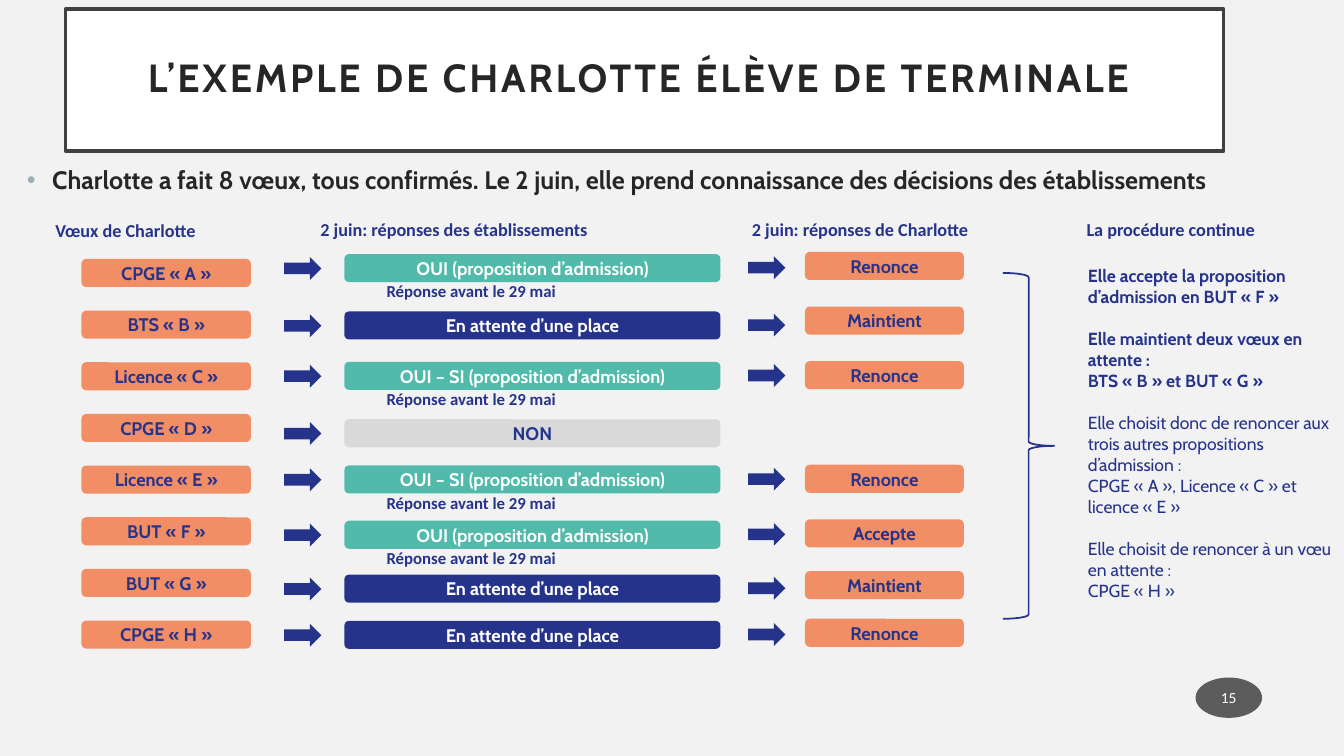
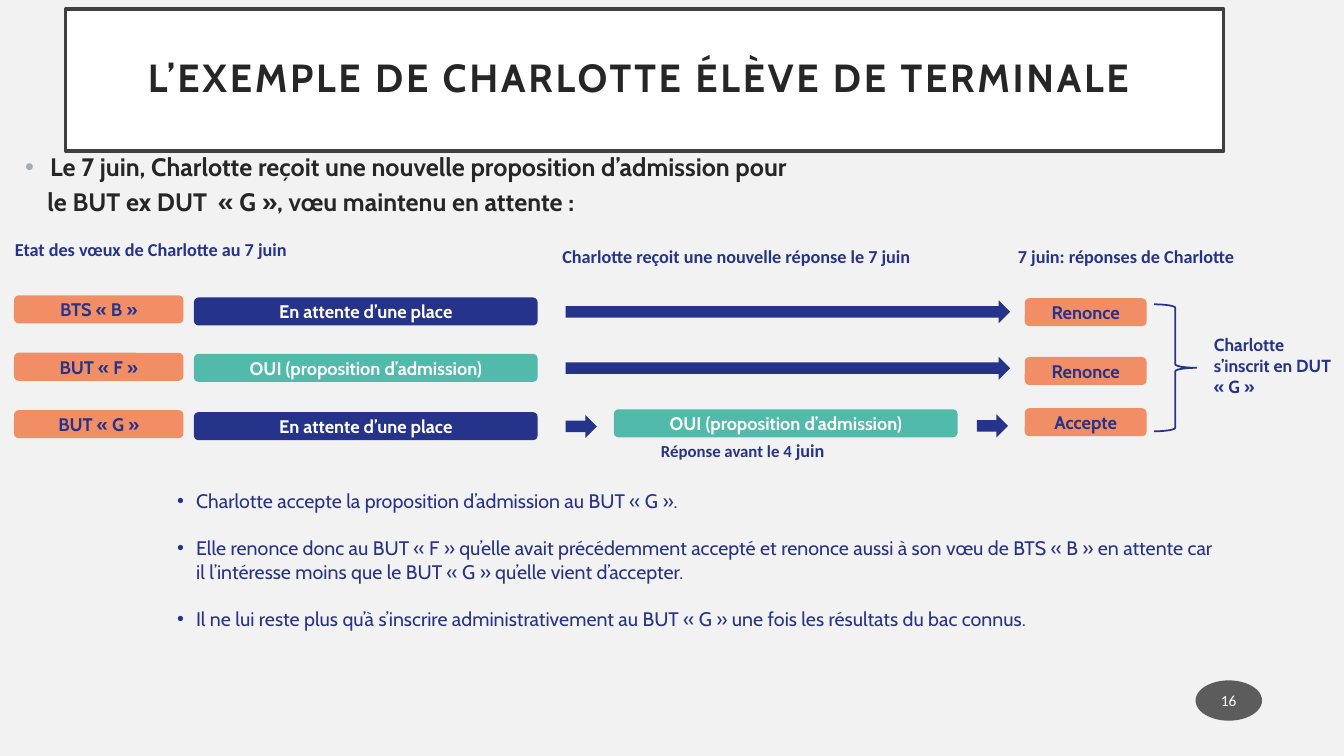
from dataclasses import dataclass

from lxml import etree
from pptx import Presentation
from pptx.dml import color as col
from pptx.enum import shapes as shp, text as txt
from pptx.oxml import ns
from pptx.util import Pt

HUES = {
    "page": "F2F2F2", "white": "FFFFFF", "frame": "404040", "ink": "262626",
    "navy": "26338B", "teal": "51BAAA", "coral": "F28E65", "gray": "D9D9D9",
    "badge": "1D1D1D", "dot": "9CB0B5",
}
STYLES = {
    "title": ("Cabin", 28, "ink", True),
    "lead": ("Cabin", 18, "ink", True),
    "pill": ("Cabin", 13, "navy", True),
    "light": ("Cabin", 13, "white", True),
    "head": ("Calibri", 13, "navy", True),
    "date": ("Calibri", 12, "navy", True),
    "strong": ("Cabin", 12.5, "navy", True),
    "plain": ("Cabin", 12.5, "navy", False),
    "point": ("Cabin", 14, "navy", False),
    "page": ("Calibri", 11, "white", False),
}
REPLIES = {
    "oui": ("OUI (proposition d’admission)", "teal", "light"),
    "si": ("OUI – SI (proposition d’admission)", "teal", "light"),
    "wait": ("En attente d’une place", "navy", "light"),
    "non": ("NON", "gray", "pill"),
}
TITLE = "L’EXEMPLE DE CHARLOTTE ÉLÈVE DE TERMINALE "
PILL = 20


@dataclass
class Para:
    runs: list
    gap: float = 0
    left: float = 0
    dot: str = ""


class Deck:
    """Hold the shared style and draw elements on the current slide."""

    def __init__(self):
        self.prs = Presentation()
        self.prs.slide_width, self.prs.slide_height = Pt(960), Pt(540)

    def hue(self, name):
        return col.RGBColor.from_string(HUES[name])

    def words(self, shape, paras, align=txt.PP_ALIGN.LEFT,
              anchor=txt.MSO_ANCHOR.TOP, pad=(7.2, 3.6)):
        frame = shape.text_frame
        frame.word_wrap = True
        frame.vertical_anchor = anchor
        frame.margin_left = frame.margin_right = Pt(pad[0])
        frame.margin_top = frame.margin_bottom = Pt(pad[1])
        for num, item in enumerate(paras):
            para = frame.add_paragraph() if num else frame.paragraphs[0]
            para.alignment = align
            para.space_before = Pt(item.gap)
            props = para._p.get_or_add_pPr()
            props.set("marL", str(Pt(item.left)))
            if item.dot:
                props.set("indent", str(-Pt(item.left)))
                tint = etree.SubElement(props, ns.qn("a:buClr"))
                etree.SubElement(tint, ns.qn("a:srgbClr"), val=HUES[item.dot])
                etree.SubElement(props, ns.qn("a:buFont"), typeface="Arial")
                etree.SubElement(props, ns.qn("a:buChar"), char="•")
            for words, style in item.runs:
                run = para.add_run()
                run.text = words
                font = run.font
                font.name, size, tone, font.bold = STYLES[style]
                font.size = Pt(size)
                font.color.rgb = self.hue(tone)
        return frame

    def shape(self, kind, box, fill=None, line=None, width=1):
        item = self.slide.shapes.add_shape(kind, *map(Pt, box))
        item.shadow.inherit = False
        if fill:
            item.fill.solid()
            item.fill.fore_color.rgb = self.hue(fill)
        else:
            item.fill.background()
        if line:
            item.line.color.rgb = self.hue(line)
            item.line.width = Pt(width)
        else:
            item.line.fill.background()
        return item

    def label(self, item, words, style, pad=(7.2, 3.6)):
        return self.words(item, [Para([(words, style)])], txt.PP_ALIGN.CENTER,
                          txt.MSO_ANCHOR.MIDDLE, pad)

    def page(self, num, top):
        blank = self.prs.slide_layouts[6]
        self.slide = self.prs.slides.add_slide(blank)
        back = self.slide.background.fill
        back.solid()
        back.fore_color.rgb = self.hue("page")
        band = self.shape(shp.MSO_SHAPE.RECTANGLE, (46.8, 6.5, 827.3, 101.5),
                          "white", "frame", 2.5)
        para = self.label(band, TITLE, "title", (14.4, 14.4)).paragraphs[0]
        para.line_spacing = 0.9
        para.runs[0].font._element.set("spc", "200")
        badge = self.shape(shp.MSO_SHAPE.OVAL, (854, top, 47.5, 28.8), "badge")
        tint = badge.fill._xPr.find(".//" + ns.qn("a:srgbClr"))
        etree.SubElement(tint, ns.qn("a:alpha"), val="70000")
        self.label(badge, str(num), "page", (1.4, 3.6))

    def text(self, box, paras):
        item = self.slide.shapes.add_textbox(*map(Pt, box))
        self.words(item, paras)

    def head(self, left, top, wide, words):
        self.text((left, top, wide, 23), [Para([(words, "head")])])

    def pill(self, left, top, wide, words, fill="coral", style="pill"):
        item = self.shape(shp.MSO_SHAPE.ROUNDED_RECTANGLE,
                          (left, top, wide, PILL), fill)
        self.label(item, words, style)

    def reply(self, left, top, wide, key):
        self.pill(left, top, wide, *REPLIES[key])

    def arrow(self, left, top, wide):
        self.shape(shp.MSO_SHAPE.RIGHT_ARROW, (left, top, wide, 16.5), "navy")

    def brace(self, *box):
        self.shape(shp.MSO_SHAPE.RIGHT_BRACE, box, None, "navy", 1.25)


def first(deck):
    deck.page(15, 484)
    deck.text((12.2, 114, 938, 30), [Para([(
        "Charlotte a fait 8 vœux, tous confirmés. Le 2 juin, elle prend "
        "connaissance des décisions des établissements", "lead")],
        left=18, dot="dot")])
    for left, top, wide, words in (
            (32.4, 153.4, 204, "Vœux de Charlotte"),
            (221.8, 152.6, 302, "2 juin: réponses des établissements"),
            (530, 152.6, 242, "2 juin: réponses de Charlotte"),
            (769, 152.6, 181, "La procédure continue")):
        deck.head(left, top, wide, words)
    rows = (
        ("CPGE « A »", "oui", 181.5, "Renonce", 180),
        ("BTS « B »", "wait", 222.5, "Maintient", 219),
        ("Licence « C »", "si", 258.5, "Renonce", 258),
        ("CPGE « D »", "non", 299.5, None, 0),
        ("Licence « E »", "si", 332.5, "Renonce", 332),
        ("BUT « F »", "oui", 372, "Accepte", 371),
        ("BUT « G »", "wait", 410.5, "Maintient", 408),
        ("CPGE « H »", "wait", 443.5, "Renonce", 442),
    )
    for num, (wish, key, mid, choice, end) in enumerate(rows):
        deck.pill(58.2, 185 + 36.9 * num, 121, wish)
        deck.arrow(203, mid + 2, 26.6)
        deck.reply(246, mid, 268.6, key)
        if choice:
            deck.arrow(534.4, mid + 1.5, 26.6)
            deck.pill(575, end, 113.4, choice)
        if key in ("oui", "si"):
            deck.text((269, mid + 15.8, 204, 21.6),
                      [Para([("Réponse avant le 29 mai", "date")])])
    deck.brace(716.4, 195, 36.7, 247)
    notes = (
        ("Elle accepte la proposition d’admission en BUT « F »", "strong", 0),
        ("Elle maintient deux vœux en attente :", "strong", 15),
        ("BTS « B » et BUT « G »", "strong", 0),
        ("Elle choisit donc de renoncer aux trois autres propositions "
         "d’admission :", "plain", 15),
        ("CPGE « A », Licence « C » et licence « E »", "plain", 0),
        ("Elle choisit de renoncer à un vœu en attente :", "plain", 15),
        ("CPGE « H »", "plain", 0),
    )
    deck.text((770, 185.8, 190, 286),
              [Para([(words, style)], gap) for words, style, gap in notes])


def second(deck):
    deck.page(16, 486)
    deck.text((10.8, 104.6, 940, 56), [
        Para([("Le 7 juin, Charlotte reçoit une nouvelle proposition "
               "d’admission pour", "lead")], left=18, dot="dot"),
        Para([("le BUT ex DUT  « G », vœu maintenu en attente :", "lead")],
             gap=3.6, left=16)])
    for left, top, wide, words in (
            (3.6, 166.3, 230, "Etat des vœux de Charlotte au 7 juin"),
            (394.6, 171.4, 287,
             "Charlotte reçoit une nouvelle réponse le 7 juin"),
            (720, 172, 197, "7 juin: réponses de Charlotte")):
        deck.head(left, top, wide, words)
    rows = (
        ("BTS « B »", 211, "wait", 212.5, "Renonce", 213, 317.5),
        ("BUT « F »", 252, "oui", 252.8, "Renonce", 255, 317.5),
        ("BUT « G »", 293, "wait", 294.4, "Accepte", 291.6, 22.3),
    )
    for wish, top, key, mid, choice, end, wide in rows:
        deck.pill(10, top, 121, wish)
        deck.reply(138.5, mid, 245.5, key)
        deck.arrow(404, mid + 2, wide)
        deck.pill(732, end, 87, choice)
    deck.reply(438.5, 292.4, 245.5, "oui")
    deck.arrow(697.7, 296, 22.3)
    deck.text((465, 310.3, 204, 23), [
        Para([("Réponse avant le 4 ", "date"), ("juin", "head")])])
    deck.brace(824.4, 217.4, 30.2, 90.7)
    deck.text((860, 234.7, 100, 52.6),
              [Para([("Charlotte s’inscrit en DUT « G »", "strong")])])
    points = (
        "Charlotte accepte la proposition d’admission au BUT « G ».",
        "Elle renonce donc au BUT « F » qu’elle avait précédemment accepté "
        "et renonce aussi à son vœu de BTS « B » en attente car il "
        "l’intéresse moins que le BUT « G » qu’elle vient d’accepter.",
        "Il ne lui reste plus qu’à s’inscrire administrativement au "
        "BUT « G » une fois les résultats du bac connus.",
    )
    deck.text((119.5, 345.6, 759.6, 124.6), [
        Para([(words, "point")], 17 if num else 0, 13.5, "navy")
        for num, words in enumerate(points)])


def main():
    deck = Deck()
    first(deck)
    second(deck)
    deck.prs.save("out.pptx")


if __name__ == "__main__":
    main()
